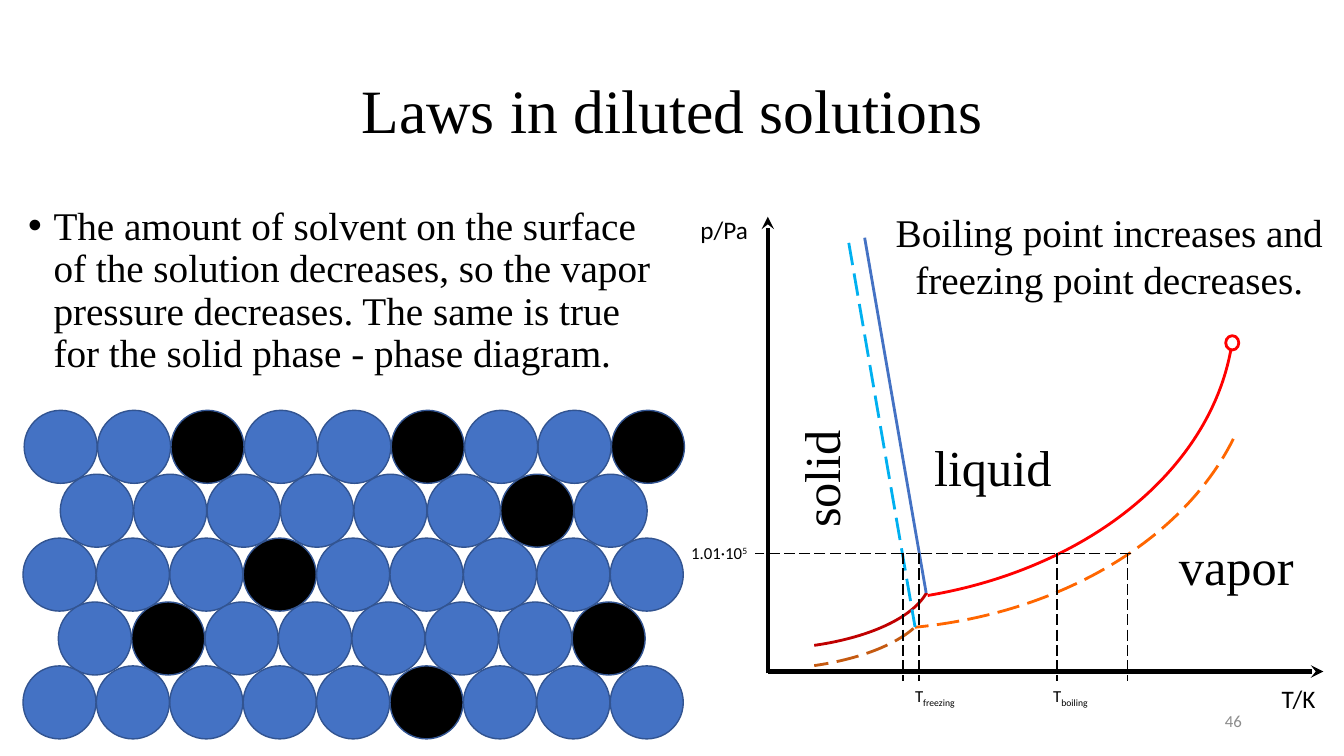
"""Builds a slide on freezing and boiling points of diluted solutions."""
from dataclasses import dataclass

from lxml.etree import SubElement
from pptx import Presentation
from pptx.dml.color import RGBColor
from pptx.enum.dml import MSO_LINE
from pptx.enum.shapes import MSO_CONNECTOR, MSO_SHAPE
from pptx.enum.text import MSO_ANCHOR, PP_ALIGN
from pptx.oxml.ns import qn
from pptx.util import Cm, Pt


@dataclass(frozen=True)
class Theme:
    """Colours, fonts and type sizes of the slide."""
    serif: str = "Times New Roman"
    sans: str = "Calibri"
    black: str = "000000"
    grey: str = "8C8C8C"
    solvent: str = "4472C4"
    outline: str = "325491"
    cyan: str = "00B0F0"
    red: str = "FF0000"
    dark_red: str = "C00000"
    orange: str = "FF6600"
    brown: str = "C55A11"
    title: int = 44
    phase: int = 36
    body: int = 28
    axis: int = 18
    small: int = 12


THEME = Theme()

TITLE = "Laws in diluted solutions"
BODY = ("The amount of solvent on the surface of the solution decreases, so the vapor "
        "pressure decreases. The same is true for the solid phase - phase diagram.")
CONCLUSION = "Boiling point increases and freezing point decreases."
PAGE_NUMBER = "46"

PHASES = [
    ("vapor", (29.46, 13.36, 3.43, 1.8), 0),
    ("liquid", (23.29, 10.87, 3.51, 1.8), 0),
    ("solid", (19.18, 11.15, 3, 1.8), 270),
]
AXIS_NAMES = [
    ("p/Pa", (17.4, 5.28, 1.73, 1.02)),
    ("T/K", (32.05, 17.09, 1.37, 1.02)),
]
MARKS = [
    ("T", "freezing", -25000, (22.81, 17.15, 1.65, 0.76)),
    ("T", "boiling", -25000, (26.29, 17.15, 1.5, 0.76)),
    ("1.01·10", "5", 30000, (17.17, 13.56, 1.96, 0.76)),
]

ARCS = [
    ((14.81, 12.65, 8.66, 3.71), (3.481, 31.116), THEME.dark_red, False),
    ((11.25, 0.46, 19.86, 14.73), (3.395, 43.79), THEME.red, False),
    ((11.84, 1.14, 19.86, 14.73), (9.203, 48.009), THEME.orange, True),
    ((14.81, 13.16, 8.66, 3.71), (7.164, 31.116), THEME.brown, True),
]
MELTING_LINES = [
    ((21.79, 5.99, 23.34, 14.94), THEME.solvent, False),
    ((21.39, 6.12, 23.06, 15.8), THEME.cyan, True),
]
AXES = [(19.35, 16.97, 19.35, 5.46), (19.35, 16.92, 33.35, 16.92)]
CRITICAL_POINT = (30.89, 8.46, 0.33, 0.36)
PRESSURE_LEVEL, GUIDE_BOTTOM = 13.94, 17.15
PRESSURE_GUIDE = (28.5, PRESSURE_LEVEL, 19.02, PRESSURE_LEVEL)
GUIDE_COLUMNS = [22.76, 23.16, 26.64, 28.42]

SOLVENT, SOLUTE = "o", "x"
PARTICLE_ROWS = [
    (0.61, "ooxooxoox"),
    (1.52, "ooooooxo"),
    (0.58, "oooxooooo"),
    (1.47, "oxoooooxo"[:7] + "x"),
    (0.58, "oooooxooo"),
]
PARTICLE_TOP, PARTICLE_SIZE = 10.34, 1.84
COLUMN_STEP, ROW_STEP = 1.85, 1.61

deck = Presentation()
deck.slide_width, deck.slide_height = Cm(33.87), Cm(19.05)
page = deck.slides.add_slide(deck.slide_layouts[6])


def colour(value):
    return RGBColor.from_string(value)


def style_line(line, tint, width, dashed=False):
    line.color.rgb = colour(tint)
    line.width = Pt(width)
    if dashed:
        line.dash_style = MSO_LINE.LONG_DASH


def add_text(text, area, size, font=THEME.serif, tint=THEME.black,
             align=PP_ALIGN.LEFT, anchor=MSO_ANCHOR.TOP, wrap=True):
    box = page.shapes.add_textbox(*map(Cm, area))
    box.text_frame.word_wrap = wrap
    box.text_frame.vertical_anchor = anchor
    para = box.text_frame.paragraphs[0]
    para.alignment = align
    para.font.name, para.font.size = font, Pt(size)
    para.font.color.rgb = colour(tint)
    para.add_run().text = text
    return box, para


def add_outline(kind, area, tint, width, dashed=False, fill=None):
    shape = page.shapes.add_shape(kind, *map(Cm, area))
    shape.shadow.inherit = False
    if fill:
        shape.fill.solid()
        shape.fill.fore_color.rgb = colour(fill)
    else:
        shape.fill.background()
    style_line(shape.line, tint, width, dashed)
    return shape


def add_line(ends, tint, width, dashed=False, arrow=False):
    line = page.shapes.add_connector(MSO_CONNECTOR.STRAIGHT, *map(Cm, ends))
    style_line(line.line, tint, width, dashed)
    properties = line._element.spPr
    if arrow:
        SubElement(properties.find(qn("a:ln")), qn("a:tailEnd"), type="stealth")
    SubElement(properties, qn("a:effectLst"))


def add_bullet(para):
    properties = para._p.get_or_add_pPr()
    properties.set("marL", str(Cm(0.64)))
    properties.set("indent", str(-Cm(0.64)))
    SubElement(properties, qn("a:buFont"), typeface="Arial")
    SubElement(properties, qn("a:buChar"), char="•")


def draw_texts():
    _, heading = add_text(TITLE, (2.34, 1.02, 29.21, 3.68), THEME.title,
                          align=PP_ALIGN.CENTER, anchor=MSO_ANCHOR.MIDDLE)
    _, body = add_text(BODY, (0.46, 5.08, 16.79, 4.95), THEME.body)
    heading.line_spacing = body.line_spacing = 0.9
    body.space_before = Pt(10)
    add_bullet(body)
    add_text(CONCLUSION, (22.2, 5.13, 11.51, 2.64), THEME.body, align=PP_ALIGN.CENTER)
    add_text(PAGE_NUMBER, (23.93, 17.65, 7.62, 1.02), THEME.small, THEME.sans,
             THEME.grey, PP_ALIGN.RIGHT, MSO_ANCHOR.MIDDLE)


def draw_diagram():
    for area, angles, tint, dashed in ARCS:
        arc = add_outline(MSO_SHAPE.ARC, area, tint, 2, dashed)
        arc.adjustments[0], arc.adjustments[1] = angles
    for ends, tint, dashed in MELTING_LINES:
        add_line(ends, tint, 2, dashed)
    add_outline(MSO_SHAPE.OVAL, CRITICAL_POINT, THEME.red, 2)
    columns = [(x, PRESSURE_LEVEL, x, GUIDE_BOTTOM) for x in GUIDE_COLUMNS]
    for ends in [PRESSURE_GUIDE, *columns]:
        add_line(ends, THEME.black, 1, dashed=True)
    for ends in AXES:
        add_line(ends, THEME.black, 3, arrow=True)
    for text, area in AXIS_NAMES:
        add_text(text, area, THEME.axis, THEME.sans, wrap=False)
    for text, area, angle in PHASES:
        box, _ = add_text(text, area, THEME.phase, wrap=False)
        box.rotation = angle
    for text, script, baseline, area in MARKS:
        _, para = add_text(text, area, THEME.small, THEME.sans, wrap=False)
        span = para.add_run()
        span.text = script
        span._r.get_or_add_rPr().set("baseline", str(baseline))


def draw_particles():
    for kind, fill in [(SOLVENT, THEME.solvent), (SOLUTE, THEME.black)]:
        for row, (left, particles) in enumerate(PARTICLE_ROWS):
            for column, particle in enumerate(particles):
                if particle == kind:
                    area = (left + column * COLUMN_STEP, PARTICLE_TOP + row * ROW_STEP,
                            PARTICLE_SIZE, PARTICLE_SIZE)
                    add_outline(MSO_SHAPE.OVAL, area, THEME.outline, 1, fill=fill)


draw_texts()
draw_diagram()
draw_particles()
deck.save("out.pptx")
